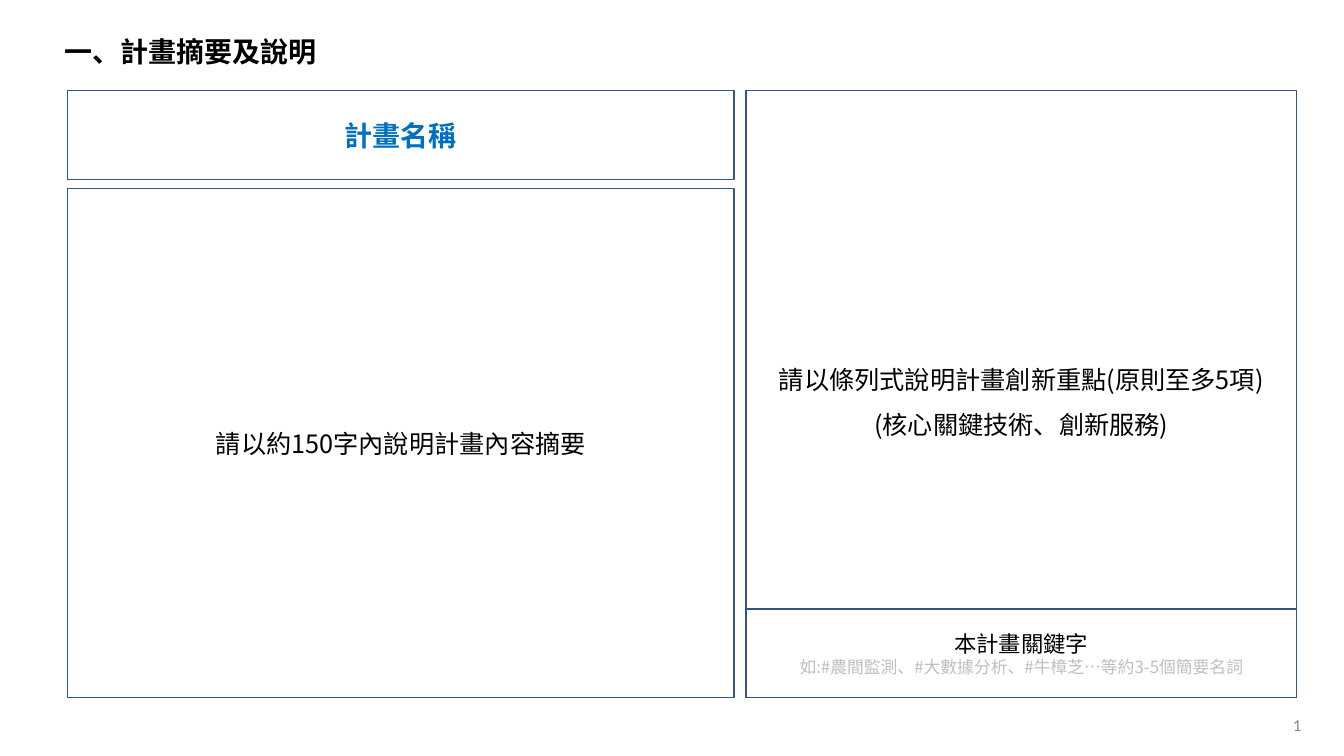
from dataclasses import dataclass

from lxml import etree
from pptx import Presentation
from pptx import util as u
from pptx.dml.color import RGBColor
from pptx.enum import shapes, text
from pptx.oxml import ns


@dataclass(frozen=True)
class Theme:
    """Colours, fonts and type sizes."""
    font: str = "Noto Sans CJK TC"
    digit: str = "Calibri"
    ink: str = "000000"
    blue: str = "0070C0"
    edge: str = "31538F"
    hint: str = "BFBFBF"
    grey: str = "888888"
    head: int = 20
    body: int = 18
    key: int = 16
    note: int = 12


class Page:
    """Draws framed boxes and labels on one slide."""

    def __init__(self, slide, theme):
        self.slide = slide
        self.theme = theme

    def style(self, par, size, color, bold=False, font=None):
        name = font or self.theme.font
        for run in par.runs:
            run.font.size = u.Pt(size)
            run.font.bold = bold
            run.font.name = name
            run.font.color.rgb = RGBColor.from_string(color)
            east = etree.SubElement(run.font._element, ns.qn("a:ea"))
            east.set("typeface", name)

    def fill(self, frame, lines, align, lead=None):
        frame.text = "\n".join(line[0] for line in lines)
        for par, (_, *look) in zip(frame.paragraphs, lines):
            par.alignment = align
            par.line_spacing = lead
            self.style(par, *look)

    def box(self, x, y, w, h, lines, lead=None):
        rect = self.slide.shapes.add_shape(
            shapes.MSO_SHAPE.RECTANGLE, *map(u.Inches, (x, y, w, h)))
        rect.shadow.inherit = False
        rect.fill.background()
        rect.line.color.rgb = RGBColor.from_string(self.theme.edge)
        rect.line.width = u.Pt(1)
        frame = rect.text_frame
        frame.word_wrap = True
        frame.vertical_anchor = text.MSO_ANCHOR.MIDDLE
        self.fill(frame, lines, text.PP_ALIGN.CENTER, lead)

    def label(self, x, y, w, h, line, align, anchor):
        area = self.slide.shapes.add_textbox(*map(u.Inches, (x, y, w, h)))
        frame = area.text_frame
        frame.word_wrap = False
        frame.vertical_anchor = anchor
        self.fill(frame, [line], align)


def main():
    deck = Presentation()
    deck.slide_width, deck.slide_height = u.Inches(13.33), u.Inches(7.5)
    look = Theme()
    page = Page(deck.slides.add_slide(deck.slide_layouts[6]), look)

    left, wide = 0.67, 6.61
    right, slim = 7.4, 5.46
    top, base, band, gap = 0.9, 6.92, 0.88, 0.09
    low = top + band + gap

    page.label(0.54, 0.29, 2.73, 0.44,
               ("一、計畫摘要及說明", look.head, look.ink, True),
               text.PP_ALIGN.LEFT, text.MSO_ANCHOR.TOP)
    page.box(left, low, wide, base - low,
             [("請以約150字內說明計畫內容摘要", look.body, look.ink)])
    page.box(right, top, slim, base - top,
             [("請以條列式說明計畫創新重點(原則至多5項)", look.body, look.ink),
              ("(核心關鍵技術、創新服務)", look.body, look.ink)], 1.5)
    page.box(left, top, wide, band,
             [("計畫名稱", look.head, look.blue, True)])
    page.box(right, base - band, slim, band,
             [("本計畫關鍵字", look.key, look.ink),
              ("如:#農間監測、#大數據分析、#牛樟芝…等約3-5個簡要名詞",
               look.note, look.hint)])
    page.label(12, 6.99, 1.73, 0.4,
               ("1", look.note, look.grey, False, look.digit),
               text.PP_ALIGN.CENTER, text.MSO_ANCHOR.MIDDLE)
    deck.save("out.pptx")


if __name__ == "__main__":
    main()
